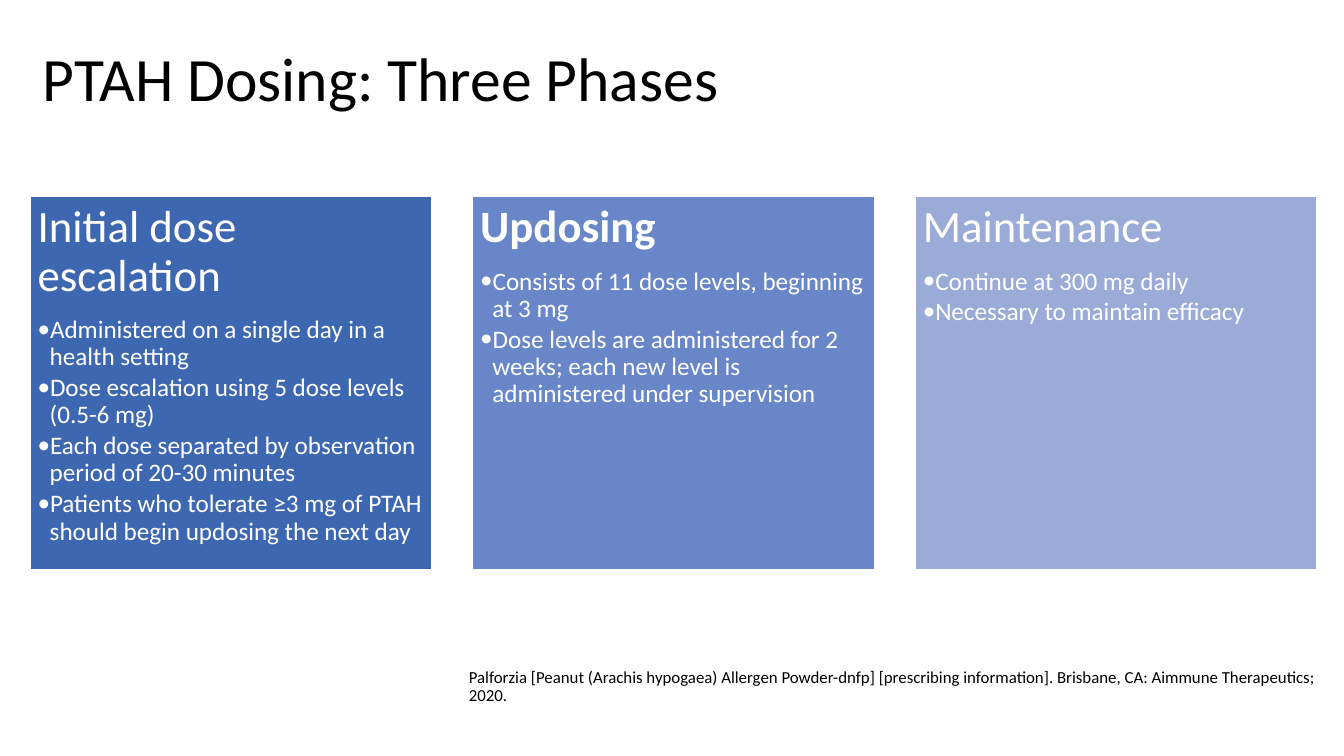
from lxml import etree
from pptx import Presentation
from pptx.dml.color import RGBColor
from pptx.enum.shapes import MSO_SHAPE
from pptx.enum.text import MSO_ANCHOR, PP_ALIGN
from pptx.oxml.ns import qn
from pptx.util import Inches, Pt

RECTANGLE = MSO_SHAPE.RECTANGLE
TOP, MIDDLE = MSO_ANCHOR.TOP, MSO_ANCHOR.MIDDLE
LEFT = PP_ALIGN.LEFT

FONT = "Calibri"
BLACK = RGBColor(0x00, 0x00, 0x00)
WHITE = RGBColor(0xFF, 0xFF, 0xFF)
DARK_BLUE = RGBColor(0x3E, 0x67, 0xB2)
MEDIUM_BLUE = RGBColor(0x69, 0x87, 0xC8)
LIGHT_BLUE = RGBColor(0x9A, 0xAB, 0xD8)

BULLET_INDENT = 0.09
CARD_INSET = 0.06
CARD_GAP = 0.3

# heading, heading is bold, fill, bullets
PHASES = [
    ("Initial dose escalation", False, DARK_BLUE, [
        "Administered on a single day in a health setting",
        "Dose escalation using 5 dose levels (0.5-6 mg)",
        "Each dose separated by observation period of 20-30 minutes",
        "Patients who tolerate ≥3 mg of PTAH should begin updosing the next day",
    ]),
    ("Updosing", True, MEDIUM_BLUE, [
        "Consists of 11 dose levels, beginning at 3 mg",
        "Dose levels are administered for 2 weeks; each new level is "
        "administered under supervision",
    ]),
    ("Maintenance", False, LIGHT_BLUE, [
        "Continue at 300 mg daily",
        "Necessary to maintain efficacy",
    ]),
]


def write_paragraph(paragraph, text, size, color, bold=False, space_after=0):
    paragraph.text = text
    paragraph.alignment = LEFT
    paragraph.line_spacing = 0.9
    paragraph.space_after = Pt(space_after)
    paragraph.font.name = FONT
    paragraph.font.size = Pt(size)
    paragraph.font.bold = bold
    paragraph.font.color.rgb = color


def add_bullet(paragraph):
    """Give the paragraph a round bullet and a hanging indent."""
    properties = paragraph._p.get_or_add_pPr()
    properties.set("marL", str(Inches(BULLET_INDENT)))
    properties.set("indent", str(-Inches(BULLET_INDENT)))
    etree.SubElement(properties, qn("a:buFont"), typeface=FONT)
    etree.SubElement(properties, qn("a:buChar"), char="•")


def add_text(slide, left, top, width, height, text, size, anchor=TOP):
    box = slide.shapes.add_textbox(
        Inches(left), Inches(top), Inches(width), Inches(height))
    frame = box.text_frame
    frame.word_wrap = True
    frame.vertical_anchor = anchor
    write_paragraph(frame.paragraphs[0], text, size, BLACK)


def add_phase_card(slide, left, top, width, height, phase):
    heading, bold, fill, bullets = phase
    card = slide.shapes.add_shape(
        RECTANGLE, Inches(left), Inches(top), Inches(width), Inches(height))
    card.shadow.inherit = False
    card.fill.solid()
    card.fill.fore_color.rgb = fill
    card.line.color.rgb = WHITE
    card.line.width = Pt(1)

    frame = card.text_frame
    frame.word_wrap = True
    frame.vertical_anchor = TOP
    frame.margin_left = frame.margin_right = Inches(CARD_INSET)
    frame.margin_top = frame.margin_bottom = Inches(CARD_INSET)
    write_paragraph(frame.paragraphs[0], heading, 24, WHITE, bold, space_after=8.4)
    for bullet in bullets:
        paragraph = frame.add_paragraph()
        paragraph.level = 1
        add_bullet(paragraph)
        write_paragraph(paragraph, bullet, 13.5, WHITE, space_after=2)


def add_phase_row(slide, left, top, width, height):
    card_width = (width - CARD_GAP * (len(PHASES) - 1)) / len(PHASES)
    for index, phase in enumerate(PHASES):
        card_left = left + index * (card_width + CARD_GAP)
        add_phase_card(slide, card_left, top, card_width, height, phase)


def main():
    presentation = Presentation()
    presentation.slide_width = Inches(10)
    presentation.slide_height = Inches(10 * 9 / 16)
    slide = presentation.slides.add_slide(presentation.slide_layouts[6])

    add_text(slide, 0.22, 0.14, 9.58, 0.94, "PTAH Dosing: Three Phases", 33, MIDDLE)
    add_phase_row(slide, 0.22, 1.46, 9.58, 2.78)
    add_text(slide, 3.39, 4.93, 6.61, 0.6,
             "Palforzia [Peanut (Arachis hypogaea) Allergen Powder-dnfp] "
             "[prescribing information]. Brisbane, CA: Aimmune Therapeutics; 2020.", 9)

    presentation.save("out.pptx")


if __name__ == "__main__":
    main()
